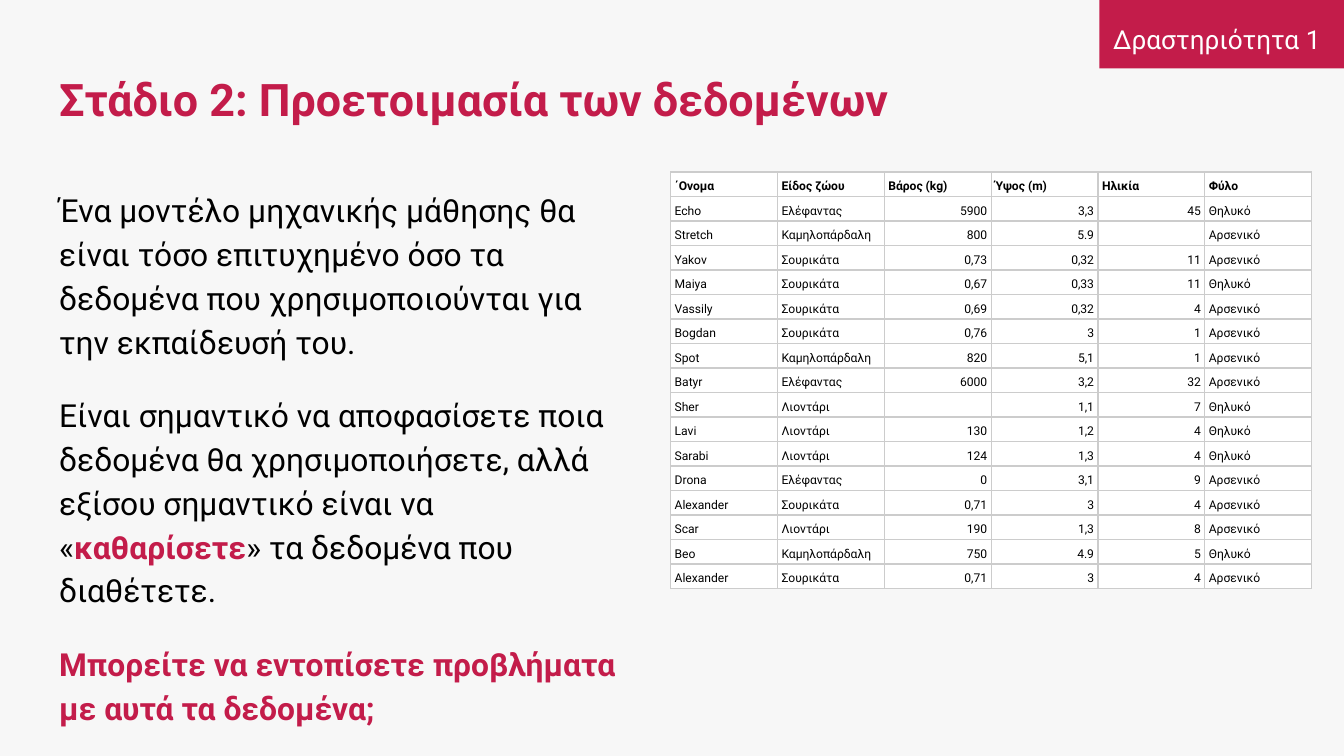
from lxml import etree
from pptx import Presentation
from pptx.dml.color import RGBColor
from pptx.enum.shapes import MSO_SHAPE
from pptx.enum.text import MSO_ANCHOR, MSO_AUTO_SIZE, PP_ALIGN
from pptx.oxml import parse_xml
from pptx.oxml.ns import nsdecls, qn
from pptx.util import Inches, Pt

RECTANGLE = MSO_SHAPE.RECTANGLE
LEFT, CENTER, RIGHT = PP_ALIGN.LEFT, PP_ALIGN.CENTER, PP_ALIGN.RIGHT
TOP, MIDDLE, BOTTOM = MSO_ANCHOR.TOP, MSO_ANCHOR.MIDDLE, MSO_ANCHOR.BOTTOM
NO_AUTOFIT = MSO_AUTO_SIZE.NONE

FONT = "Roboto"
COLORS = {
    "background": "F7F7F7",
    "accent": "C31C4A",
    "text": "000000",
    "white": "FFFFFF",
    "border": "CCCCCC",
}

TITLE = "Στάδιο 2: Προετοιμασία των δεδομένων"
ACTIVITY = "Δραστηριότητα 1"
EXPLANATION = [
    [("Ένα μοντέλο μηχανικής μάθησης θα είναι τόσο επιτυχημένο όσο τα δεδομένα "
      "που χρησιμοποιούνται για την εκπαίδευσή του.", False)],
    [("Είναι σημαντικό να αποφασίσετε ποια δεδομένα θα χρησιμοποιήσετε, αλλά "
      "εξίσου σημαντικό είναι να «", False),
     ("καθαρίσετε", True),
     ("» τα δεδομένα που διαθέτετε.", False)],
    [("Μπορείτε να εντοπίσετε προβλήματα με αυτά τα δεδομένα;", True)],
]
ANIMALS = [
    ("΄Ονομα", "Είδος ζώου", "Βάρος (kg)", "Ύψος (m)", "Ηλικία", "Φύλο"),
    ("Echo", "Ελέφαντας", "5900", "3,3", "45", "Θηλυκό"),
    ("Stretch", "Καμηλοπάρδαλη", "800", "5.9", "", "Αρσενικό"),
    ("Yakov", "Σουρικάτα", "0,73", "0,32", "11", "Αρσενικό"),
    ("Maiya", "Σουρικάτα", "0,67", "0,33", "11", "Θηλυκό"),
    ("Vassily", "Σουρικάτα", "0,69", "0,32", "4", "Αρσενικό"),
    ("Bogdan", "Σουρικάτα", "0,76", "3", "1", "Αρσενικό"),
    ("Spot", "Καμηλοπάρδαλη", "820", "5,1", "1", "Αρσενικό"),
    ("Batyr", "Ελέφαντας", "6000", "3,2", "32", "Αρσενικό"),
    ("Sher", "Λιοντάρι", "", "1,1", "7", "Θηλυκό"),
    ("Lavi", "Λιοντάρι", "130", "1,2", "4", "Θηλυκό"),
    ("Sarabi", "Λιοντάρι", "124", "1,3", "4", "Θηλυκό"),
    ("Drona", "Ελέφαντας", "0", "3,1", "9", "Αρσενικό"),
    ("Alexander", "Σουρικάτα", "0,71", "3", "4", "Αρσενικό"),
    ("Scar", "Λιοντάρι", "190", "1,3", "8", "Αρσενικό"),
    ("Beo", "Καμηλοπάρδαλη", "750", "4.9", "5", "Θηλυκό"),
    ("Alexander", "Σουρικάτα", "0,71", "3", "4", "Αρσενικό"),
]
NUMERIC_COLUMNS = (2, 3, 4)


def rgb(name):
    """Return the named colour."""
    return RGBColor.from_string(COLORS[name])


def write(paragraph, text, size, color="text", bold=False, align=LEFT,
          line_spacing=1.15, before=0, after=0):
    """Append formatted text to a paragraph."""
    paragraph.alignment = align
    paragraph.line_spacing = line_spacing
    paragraph.space_before, paragraph.space_after = Pt(before), Pt(after)
    if not text:
        end = etree.SubElement(paragraph._p, qn("a:endParaRPr"))
        end.set("sz", str(int(size * 100)))
        return
    run = paragraph.add_run()
    run.text = text
    run.font.name = FONT
    run.font.size = Pt(size)
    run.font.bold = bold
    run.font.color.rgb = rgb(color)


def set_frame(shape, left, top, width, height, anchor=TOP):
    """Place a text shape and return its prepared text frame."""
    shape.left, shape.top = Inches(left), Inches(top)
    shape.width, shape.height = Inches(width), Inches(height)
    frame = shape.text_frame
    frame.word_wrap = True
    frame.auto_size = NO_AUTOFIT
    frame.vertical_anchor = anchor
    frame.margin_left = frame.margin_right = Inches(0.1)
    frame.margin_top = frame.margin_bottom = Inches(0.1)
    return frame


def remove_bullet(paragraph):
    """Turn a list paragraph into plain text."""
    properties = paragraph._p.get_or_add_pPr()
    properties.set("marL", "0")
    properties.set("indent", "0")
    etree.SubElement(properties, qn("a:buNone"))


def add_activity_tag(slide):
    """Add the corner band and its label."""
    band = slide.shapes.add_shape(
        RECTANGLE, Inches(8.18), Inches(0), Inches(1.82), Inches(0.51))
    band.shadow.inherit = False
    band.fill.solid()
    band.fill.fore_color.rgb = rgb("accent")
    band.line.fill.background()
    label = slide.shapes.add_textbox(0, 0, 0, 0)
    frame = set_frame(label, 8.17, 0.04, 1.77, 0.42)
    write(frame.paragraphs[0], ACTIVITY, 14, color="white", align=CENTER, after=16)


def fill_title(slide):
    """Fill the title placeholder."""
    frame = set_frame(slide.shapes.title, 0.34, 0.35, 9.32, 0.76, anchor=MIDDLE)
    write(frame.paragraphs[0], TITLE, 24, color="accent", bold=True, line_spacing=1)


def fill_explanation(slide):
    """Fill the body placeholder with the explanation."""
    frame = set_frame(slide.placeholders[1], 0.34, 1.28, 4.48, 4)
    for index, parts in enumerate(EXPLANATION):
        paragraph = frame.add_paragraph() if index else frame.paragraphs[0]
        for text, emphasized in parts:
            write(paragraph, text, 17, color="accent" if emphasized else "text",
                  bold=emphasized, before=16 if index else 0)
        remove_bullet(paragraph)


def style_cell(cell):
    """Give a table cell its margins, fill and borders."""
    cell.margin_left = cell.margin_right = Inches(0.03)
    cell.margin_top = cell.margin_bottom = Inches(0.02)
    cell.vertical_anchor = BOTTOM
    cell.fill.solid()
    cell.fill.fore_color.rgb = rgb("white")
    properties = cell._tc.get_or_add_tcPr()
    for position, side in enumerate(("lnL", "lnR", "lnT", "lnB")):
        properties.insert(position, parse_xml(
            f'<a:{side} {nsdecls("a")} w="{Pt(0.75)}"><a:solidFill>'
            f'<a:srgbClr val="{COLORS["border"]}"/></a:solidFill></a:{side}>'))


def add_animal_table(slide):
    """Add the table of animal records."""
    table = slide.shapes.add_table(
        len(ANIMALS), len(ANIMALS[0]),
        Inches(4.99), Inches(1.28), Inches(4.77), Inches(3.1)).table
    table.horz_banding = False
    for row, record in enumerate(ANIMALS):
        for column, value in enumerate(record):
            cell = table.cell(row, column)
            style_cell(cell)
            numeric = row > 0 and column in NUMERIC_COLUMNS
            write(cell.text_frame.paragraphs[0], value, 6.5, bold=row == 0,
                  align=RIGHT if numeric else LEFT)


def main():
    """Build and save the slide."""
    presentation = Presentation()
    presentation.slide_width = Inches(10)
    presentation.slide_height = Inches(10 * 9 / 16)
    slide = presentation.slides.add_slide(presentation.slide_layouts[1])
    slide.background.fill.solid()
    slide.background.fill.fore_color.rgb = rgb("background")
    fill_title(slide)
    fill_explanation(slide)
    add_animal_table(slide)
    add_activity_tag(slide)
    presentation.save("out.pptx")


if __name__ == "__main__":
    main()
